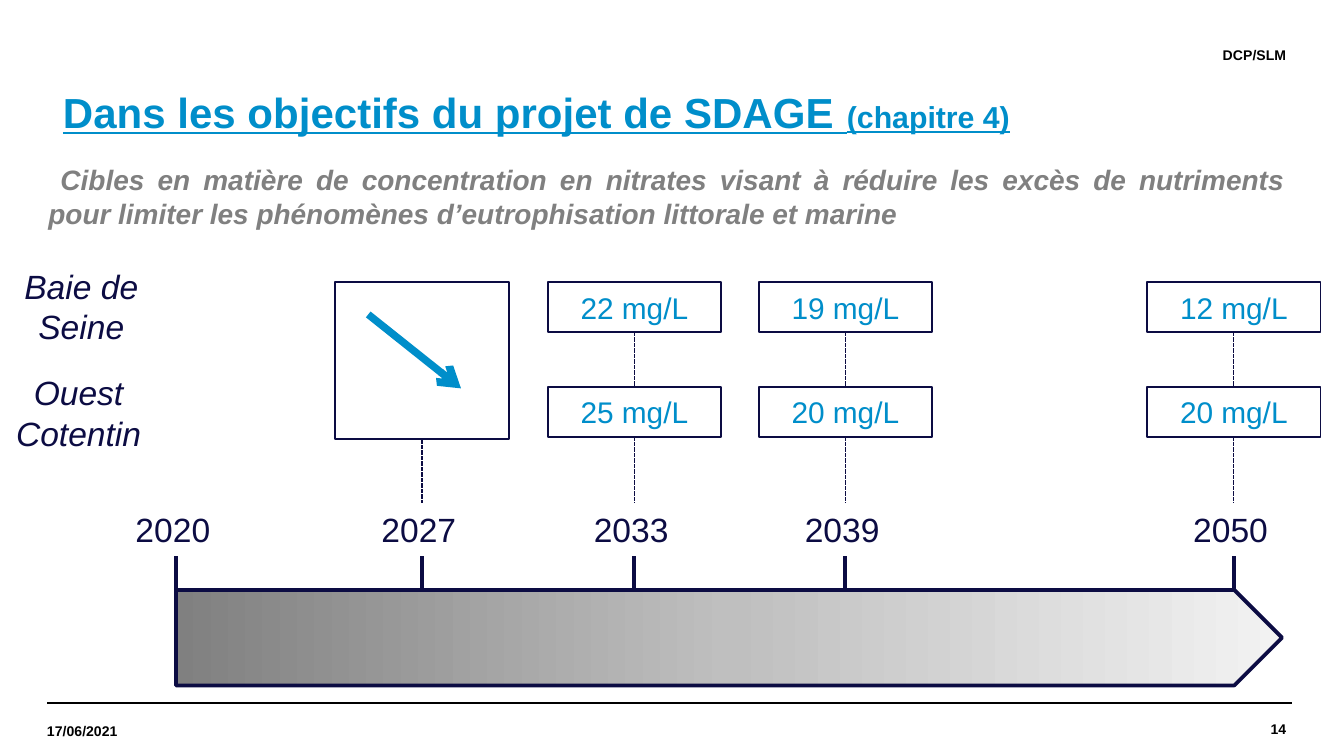
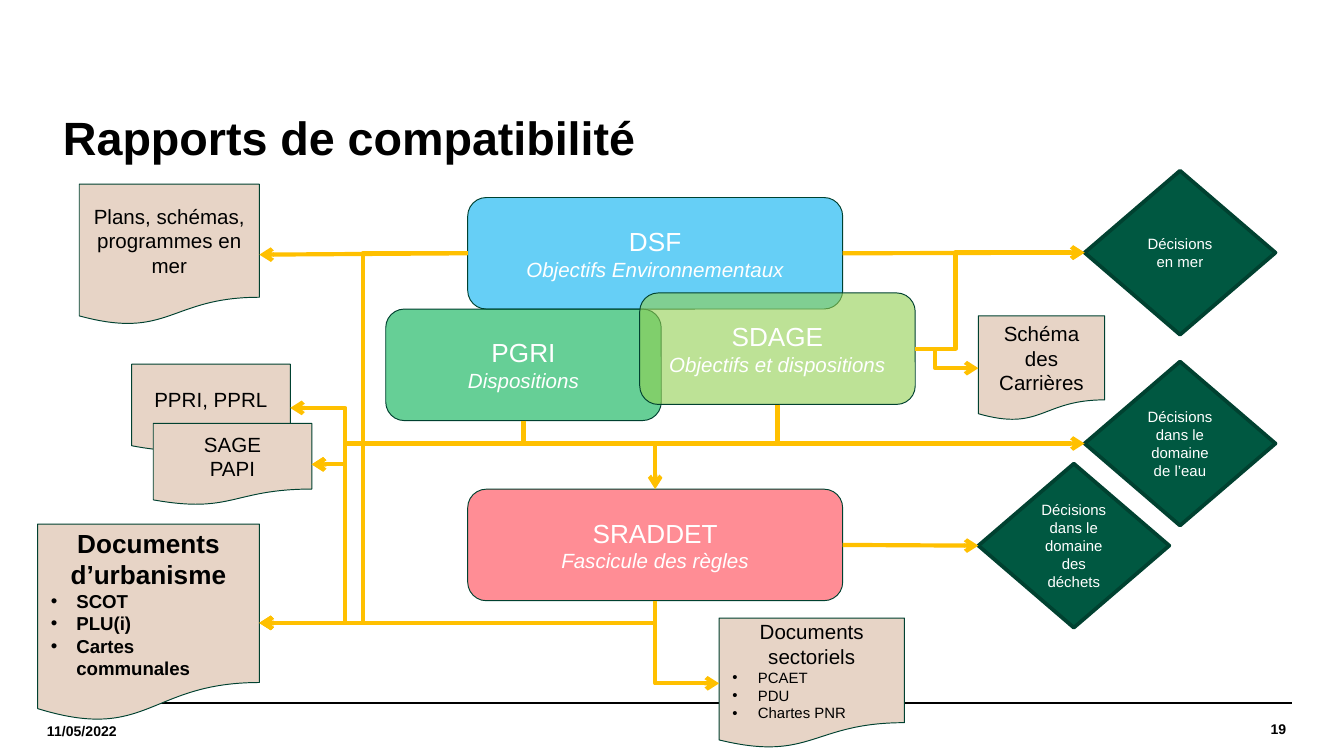
from copy import deepcopy
from dataclasses import dataclass

from lxml.etree import SubElement
from pptx import Presentation
from pptx.dml.color import RGBColor
from pptx.enum.dml import MSO_LINE
from pptx.enum.shapes import MSO_CONNECTOR, MSO_SHAPE
from pptx.enum.text import MSO_ANCHOR, PP_ALIGN
from pptx.oxml.ns import qn
from pptx.util import Inches, Pt


@dataclass(frozen=True)
class Theme:
    font: str = "Arial"
    black: str = "000000"
    white: str = "FFFFFF"
    navy: str = "0C0C43"
    blue: str = "008ECA"
    grey: str = "808080"
    amber: str = "FFC000"
    edge: str = "004130"
    sand: str = "E7D4C6"
    forest: str = "005841"
    sky: str = "00B0F0"
    green: str = "00B050"
    lime: str = "92D050"
    pink: str = "FF8D95"
    ramp: tuple = ((0, "808080"), (0.5, "BFBFBF"), (1, "F2F2F2"))
    title: float = 25
    long_title: float = 22.5
    chapter: float = 16.2
    footer: float = 7.5
    body: float = 15
    label: float = 18
    value: float = 16
    big: float = 14
    medium: float = 11
    item: float = 10
    small: float = 8


T = Theme()

TARGETS = {
    "title": ("Dans les objectifs du projet de SDAGE ", "(chapitre 4)"),
    "tag": "DCP/SLM",
    "intro": "Cibles en matière de concentration en nitrates visant à réduire les excès "
             "de nutriments pour limiter les phénomènes d’eutrophisation littorale et marine",
    "date": "17/06/2021",
    "page": "14",
}
BAYS = [("Baie de Seine", -0.18, 1.93), ("Ouest Cotentin", -0.2, 2.72)]
MILESTONES = [
    ("2020", 1.31, None),
    ("2027", 3.14, ()),
    ("2033", 4.72, ("22 mg/L", "25 mg/L")),
    ("2039", 6.29, ("19 mg/L", "20 mg/L")),
    ("2050", 9.18, ("12 mg/L", "20 mg/L")),
]
VALUE_W = 1.29

LINKS = {"title": "Rapports de compatibilité", "date": "11/05/2022", "page": "19"}
PLANS = [
    ("DSF", "Objectifs Environnementaux", (3.48, 1.47, 2.79), T.sky, 60),
    ("PGRI", "Dispositions", (2.87, 2.3, 2.05), T.green, 60),
    ("SDAGE", "Objectifs et dispositions", (4.76, 2.18, 2.05), T.lime, 60),
    ("SRADDET", "Fascicule des règles", (3.48, 3.64, 2.79), T.pink, 100),
]
DECISIONS = [
    ("déchets", "Décisions dans le domaine des déchets", 7.28, 3.45),
    ("eau", "Décisions dans le domaine de l’eau", 8.07, 2.69),
    ("mer", "Décisions en mer", 8.07, 1.27),
]
DOCUMENTS = [
    ("PPRI", (0.98, 2.71, 1.18, 0.65), ["PPRI, PPRL"], []),
    ("SAGE", (1.14, 3.15, 1.18, 0.61), ["SAGE", "PAPI"], []),
    ("programmes", (0.59, 1.37, 1.34, 1.05), ["Plans, schémas, programmes en mer"], []),
    ("carrières", (7.28, 2.35, 0.94, 0.78), ["Schéma des Carrières"], []),
    ("sectoriels", (5.35, 4.6, 1.38, 0.97), ["Documents sectoriels"],
     ["PCAET", "PDU", "Chartes PNR"]),
    ("urbanisme", (0.28, 3.9, 1.65, 1.47), ["Documents d’urbanisme"],
     ["SCOT", "PLU(i)", "Cartes communales"]),
]
TOP, LEFT, BOTTOM, RIGHT = range(4)
TRUNK_X, BUS_Y = 2.57, 3.3
STRAIGHT = [
    ("DSF", LEFT, "programmes", RIGHT),
    ("DSF", RIGHT, "mer", LEFT),
    ("SRADDET", RIGHT, "déchets", LEFT),
]
CORNERS = [("SRADDET", "sectoriels", LEFT), ("SRADDET", "urbanisme", RIGHT), ("SDAGE", "eau", LEFT)]
STEPS = [
    ("PPRI", RIGHT, "SAGE", RIGHT, TRUNK_X, True),
    ("SAGE", RIGHT, "urbanisme", RIGHT, TRUNK_X, True),
    ("SDAGE", RIGHT, "carrières", LEFT, 6.96, False),
    ("SDAGE", RIGHT, "mer", LEFT, 7.11, False),
    ("DSF", LEFT, "urbanisme", RIGHT, 2.7, False),
]


def rgb(value):
    return RGBColor.from_string(value)


def style(p, size, color, bold=False, italic=False, align=PP_ALIGN.LEFT):
    p.alignment = align
    for r in p.runs:
        f = r.font
        f.name, f.size, f.bold, f.italic = T.font, Pt(size), bold, italic
        f.color.rgb = rgb(color)


def indent(p, left, first):
    pPr = p._p.get_or_add_pPr()
    pPr.set("marL", str(Inches(left)))
    pPr.set("indent", str(Inches(first)))
    return pPr


def add_text(s, box, text, size, color, anchor=MSO_ANCHOR.TOP, inset=True, **kw):
    sp = s.shapes.add_textbox(*map(Inches, box))
    tf = sp.text_frame
    tf.word_wrap, tf.vertical_anchor = True, anchor
    if not inset:
        tf.margin_left = tf.margin_right = tf.margin_top = tf.margin_bottom = 0
    tf.text = text
    style(tf.paragraphs[0], size, color, **kw)
    return sp


def add_box(s, kind, box, fill, line, width, lines=(), alpha=100):
    sp = s.shapes.add_shape(kind, *map(Inches, box))
    sp.shadow.inherit = False
    sp.fill.solid()
    sp.fill.fore_color.rgb = rgb(fill)
    if alpha < 100:
        clr = sp._element.spPr.find(".//" + qn("a:srgbClr"))
        SubElement(clr, qn("a:alpha")).set("val", str(alpha * 1000))
    sp.line.color.rgb, sp.line.width = rgb(line), Pt(width)
    tf = sp.text_frame
    tf.word_wrap, tf.vertical_anchor = True, MSO_ANCHOR.MIDDLE
    if lines:
        tf.text = "\n".join(text for text, _ in lines)
        for p, (_, look) in zip(tf.paragraphs, lines):
            style(p, **{"align": PP_ALIGN.CENTER, **look})
    return sp


def add_line(s, start, end, color, width, kind=MSO_CONNECTOR.STRAIGHT, head=False, tail=False):
    c = s.shapes.add_connector(kind, *map(Inches, (*start, *end)))
    c.line.color.rgb, c.line.width = rgb(color), Pt(width)
    SubElement(c._element.spPr, qn("a:effectLst"))
    ln = c.line._get_or_add_ln()
    for tag, wanted in (("a:headEnd", head), ("a:tailEnd", tail)):
        if wanted:
            SubElement(ln, qn(tag)).set("type", "arrow")
    return c


def flow(s, start, end, **kw):
    return add_line(s, start, end, T.amber, 2.25, **kw)


def add_step(s, start, end, via, both):
    c = flow(s, start, end, kind=MSO_CONNECTOR.ELBOW, head=both, tail=True)
    gd = SubElement(c._element.spPr.prstGeom.get_or_add_avLst(), qn("a:gd"))
    gd.set("name", "adj1")
    gd.set("fmla", f"val {round((via - start[0]) / (end[0] - start[0]) * 100000)}")


def add_corner(s, start, end, tail=True):
    (x1, y1), (x2, y2) = start, end
    cx, cy, w, h = (x1 + x2) / 2, (y1 + y2) / 2, y2 - y1, abs(x2 - x1)
    side = 1 if x2 < x1 else -1
    c = flow(s, (cx - side * w / 2, cy - h / 2), (cx + side * w / 2, cy + h / 2),
             kind=MSO_CONNECTOR.ELBOW, tail=tail)
    c._element.spPr.prstGeom.set("prst", "bentConnector2")
    c._element.spPr.find(qn("a:xfrm")).set("rot", str((90 if side > 0 else 270) * 60000))


def port(sp, site):
    x, y, w, h = (v / Inches(1) for v in (sp.left, sp.top, sp.width, sp.height))
    return [(x + w / 2, y), (x, y + h / 2), (x + w / 2, y + h), (x + w, y + h / 2)][site]


def add_page(prs, content):
    s = prs.slides.add_slide(prs.slide_layouts[6])
    for x in (0.35, 0.39):
        add_line(s, (x, 5.23), (x + 9.22, 5.23), T.black, 0.8)
    small = dict(size=T.footer, color=T.black, bold=True, anchor=MSO_ANCHOR.MIDDLE, inset=False)
    add_text(s, (0.35, 5.25, 1.3, 0.38), content["date"], **small)
    add_text(s, (8.09, 5.23, 1.48, 0.39), content["page"], align=PP_ALIGN.RIGHT, **small)
    if "tag" in content:
        add_text(s, (3.14, 0.21, 6.43, 0.39), content["tag"], align=PP_ALIGN.RIGHT, **small)
    return s


def add_title(s, text, size, color):
    sp = add_text(s, (0.35, 0.75, 9.21, 0.59), text, size, color, MSO_ANCHOR.MIDDLE, bold=True)
    p = sp.text_frame.paragraphs[0]
    indent(p, 0.02, 0)
    p.line_spacing = 0.9
    return sp


def build_targets(prs):
    s = add_page(prs, TARGETS)
    main_text, chapter = TARGETS["title"]
    sp = add_title(s, main_text, T.long_title, T.blue)
    sp.text_frame.margin_bottom = Inches(0.43)
    p = sp.text_frame.paragraphs[0]
    p.add_run().text = chapter
    style(p, T.long_title, T.blue, bold=True)
    p.runs[1].font.size = Pt(T.chapter)
    for r in p.runs:
        r.font.underline = True

    sp = add_text(s, (0.35, 1.21, 9.21, 0.5), TARGETS["intro"], T.body, T.grey, inset=False,
                  bold=True, italic=True, align=PP_ALIGN.JUSTIFY)
    indent(sp.text_frame.paragraphs[0], 0.01, 0.09)
    for name, x, y in BAYS:
        add_text(s, (x, y, 1.57, 0.71), name, T.label, T.navy, italic=True, align=PP_ALIGN.CENTER)

    arrow = add_box(s, MSO_SHAPE.RIGHT_ARROW, (1.31, 4.39, 8.23, 0.71), T.grey, T.navy, 2)
    arrow.adjustments[0], arrow.adjustments[1] = 1, 0.5
    arrow.fill.gradient()
    arrow.fill.gradient_angle = 0
    stops = arrow._element.spPr.find(".//" + qn("a:gsLst"))
    stops.append(deepcopy(stops[1]))
    for stop, (position, color) in zip(arrow.fill.gradient_stops, T.ramp):
        stop.position, stop.color.rgb = position, rgb(color)

    for year, x, values in MILESTONES:
        label = add_text(s, (x - 0.4, 3.74, 0.8, 0.4), year, T.label, T.navy)
        tick = add_line(s, (x, 4.39), (x, 4.14), T.navy, 2)
        tick.end_connect(label, BOTTOM)
        if values is None:
            continue
        look = dict(size=T.value, color=T.blue)
        tops = [2.1, 2.88] if values else [2.1]
        height = 0.37 if values else 1.17
        for i, y in enumerate(tops):
            lines = [(values[i], look)] if values else ()
            sp = add_box(s, MSO_SHAPE.RECTANGLE, (x - VALUE_W / 2, y, VALUE_W, height),
                         T.white, T.navy, 1, lines)
            if i == 0:
                dash = add_line(s, (x, y + height), (x, 3.74), T.navy, 0.75)
                dash.line.dash_style = MSO_LINE.SQUARE_DOT
                dash.begin_connect(sp, BOTTOM)
                dash.end_connect(label, TOP)
    add_line(s, (2.74, 2.34), (3.43, 2.89), T.blue, 4, tail=True)


def build_links(prs):
    s = add_page(prs, LINKS)
    add_title(s, LINKS["title"], T.title, T.black)
    nodes = {}
    for name, text, x, y in DECISIONS:
        nodes[name] = add_box(s, MSO_SHAPE.FLOWCHART_DECISION, (x, y, 1.42, 1.22), T.forest,
                              T.edge, 2, [(text, dict(size=T.small, color=T.white))])
    for name, detail, box, fill, alpha in PLANS:
        lines = [(name, dict(size=T.big, color=T.white)),
                 (detail, dict(size=T.medium, color=T.white, italic=True))]
        nodes[name] = add_box(s, MSO_SHAPE.ROUNDED_RECTANGLE, (*box, 0.83), fill,
                              T.edge, 0.5, lines, alpha)
    for name, box, heads, items in DOCUMENTS:
        strong = name == "urbanisme"
        head = dict(size=T.big if strong else T.medium, color=T.black, bold=strong)
        item = dict(head, size=T.item if strong else T.small, align=PP_ALIGN.LEFT)
        lines = [(t, head) for t in heads] + [(t, item) for t in items]
        sp = add_box(s, MSO_SHAPE.FLOWCHART_DOCUMENT, box, T.sand, T.edge, 0.5, lines)
        for p in sp.text_frame.paragraphs[len(heads):]:
            pPr = indent(p, 0.19, -0.19)
            SubElement(pPr, qn("a:buFont")).set("typeface", T.font)
            SubElement(pPr, qn("a:buChar")).set("char", "•")
        nodes[name] = sp

    for name in ("PGRI", "SDAGE"):
        add_corner(s, port(nodes[name], BOTTOM), (TRUNK_X, BUS_Y), tail=False)
    for a, b, site in CORNERS:
        add_corner(s, port(nodes[a], BOTTOM), port(nodes[b], site))
    for a, out, b, into, via, both in STEPS:
        add_step(s, port(nodes[a], out), port(nodes[b], into), via, both)
    for a, out, b, into in STRAIGHT:
        c = flow(s, port(nodes[a], out), port(nodes[b], into), tail=True)
        c.begin_connect(nodes[a], out)
        c.end_connect(nodes[b], into)
    top = port(nodes["SRADDET"], TOP)
    flow(s, (top[0], BUS_Y), top, tail=True).end_connect(nodes["SRADDET"], TOP)


def main():
    prs = Presentation()
    prs.slide_width = Inches(10)
    prs.slide_height = Inches(10 * 9 / 16)
    build_targets(prs)
    build_links(prs)
    prs.save("out.pptx")


if __name__ == "__main__":
    main()
